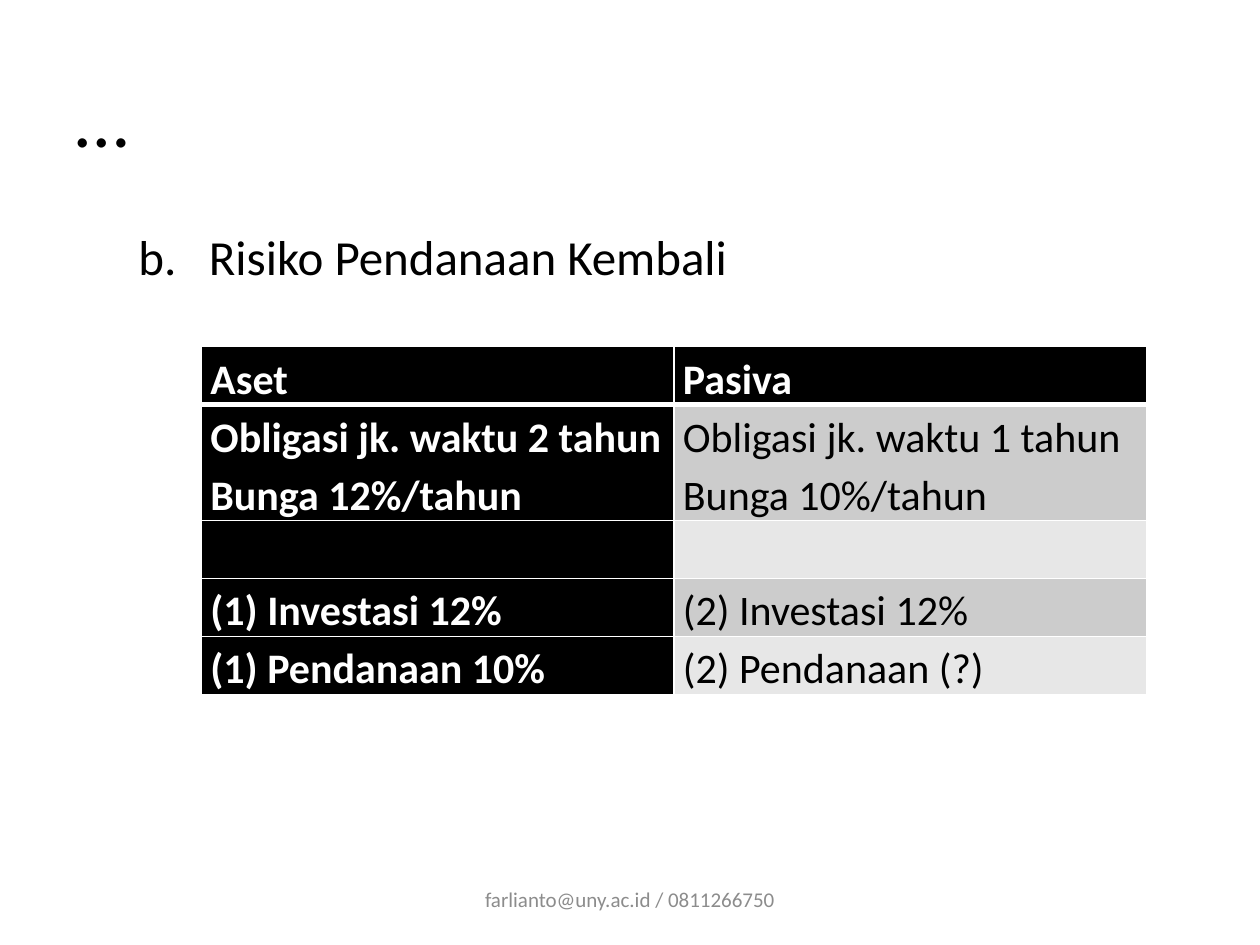
from lxml.etree import SubElement as Sub
from pptx import Presentation
from pptx.dml.color import RGBColor as RGB
from pptx.enum.text import MSO_ANCHOR as ANCHOR, PP_ALIGN as ALIGN
from pptx.oxml.ns import qn
from pptx.util import Inches as In, Pt

BLACK = RGB(0, 0, 0)
WHITE = RGB(255, 255, 255)
GRAY = RGB(0x8C, 0x8C, 0x8C)
BAND_DARK = RGB(0xCC, 0xCC, 0xCC)
BAND_LIGHT = RGB(0xE7, 0xE7, 0xE7)

WIDTH, HEIGHT = In(10), In(7.5)
ROWS = [
    (["Aset"], ["Pasiva"]),
    (["Obligasi jk. waktu 2 tahun", "Bunga 12%/tahun"],
     ["Obligasi jk. waktu 1 tahun", "Bunga 10%/tahun"]),
    ([], []),
    (["(1) Investasi 12%"], ["(2) Investasi 12%"]),
    (["(1) Pendanaan 10%"], ["(2) Pendanaan (?)"]),
]


def share(left, top, width, height):
    return (int(WIDTH * left), int(HEIGHT * top),
            int(WIDTH * width), int(HEIGHT * height))


def apply(obj, values):
    for name, value in values.items():
        setattr(obj, name, value)


def write(p, text, size, color, bold=False):
    r = p.add_run()
    r.text = text
    apply(r.font, {"name": "Calibri", "size": Pt(size), "bold": bold})
    r.font.color.rgb = color


def add_title(s, box, text):
    sp = s.shapes.title
    apply(sp, dict(zip(("left", "top", "width", "height"), box)))
    tf = sp.text_frame
    tf.vertical_anchor = ANCHOR.MIDDLE
    p = tf.paragraphs[0]
    p.alignment = ALIGN.LEFT
    write(p, text, 44, BLACK)


def add_text(s, box, text, size, color, anchor, align):
    tf = s.shapes.add_textbox(*box).text_frame
    apply(tf, {"word_wrap": True, "vertical_anchor": anchor})
    p = tf.paragraphs[0]
    p.alignment = align
    write(p, text, size, color)
    return p


def add_body(s, box, text):
    p = add_text(s, box, text, 28, BLACK, ANCHOR.TOP, ALIGN.LEFT)
    pPr = p._p.get_or_add_pPr()
    pPr.set("marL", str(In(1.06)))
    pPr.set("indent", str(-In(0.56)))
    Sub(pPr, qn("a:buFont"), typeface="Calibri")
    Sub(pPr, qn("a:buAutoNum"), type="alphaLcPeriod", startAt="2")


def add_borders(cell, widths):
    tcPr = cell._tc.get_or_add_tcPr()
    for side, width in widths.items():
        ln = Sub(tcPr, qn(f"a:ln{side}"), w=str(Pt(width)))
        fill = Sub(ln, qn("a:solidFill"))
        Sub(fill, qn("a:srgbClr"), val=str(WHITE))


def fill_cell(cell, lines, row, col):
    apply(cell, {"margin_left": In(0.07), "margin_right": In(0.07),
                 "margin_top": 0, "margin_bottom": 0})
    add_borders(cell, {"L": 1, "R": 1, "T": 3 if row == 1 else 1,
                       "B": 3 if row == 0 else 1})
    strong = row == 0 or col == 0
    band = BAND_DARK if row % 2 else BAND_LIGHT
    cell.fill.solid()
    cell.fill.fore_color.rgb = BLACK if strong else band
    tf = cell.text_frame
    for i, line in enumerate(lines):
        p = tf.add_paragraph() if i else tf.paragraphs[0]
        p.line_spacing = 1.15
        write(p, line, 24, WHITE if strong else BLACK, strong)


def add_balance_table(s, box, rows):
    table = s.shapes.add_table(len(rows), len(rows[0]), *box).table
    counts = [max(1, *map(len, row)) for row in rows]
    unit = box[3] // sum(counts)
    for r, row in enumerate(rows):
        table.rows[r].height = unit * counts[r]
        for c, lines in enumerate(row):
            fill_cell(table.cell(r, c), lines, r, c)


def main():
    prs = Presentation()
    apply(prs, {"slide_width": WIDTH, "slide_height": HEIGHT})
    s = prs.slides.add_slide(prs.slide_layouts[5])
    add_title(s, share(0.05, 0.04, 0.9, 1 / 6), "…")
    add_body(s, share(0.05, 1.75 / 7.5, 0.9, 0.66), "Risiko Pendanaan Kembali")
    add_balance_table(s, share(0.16, 2.75 / 7.5, 0.75, 2.76 / 7.5), ROWS)
    add_text(s, share(0.34, 6.95 / 7.5, 0.32, 0.05),
             "farlianto@uny.ac.id / 0811266750", 12, GRAY,
             ANCHOR.MIDDLE, ALIGN.CENTER)
    prs.save("out.pptx")


if __name__ == "__main__":
    main()
